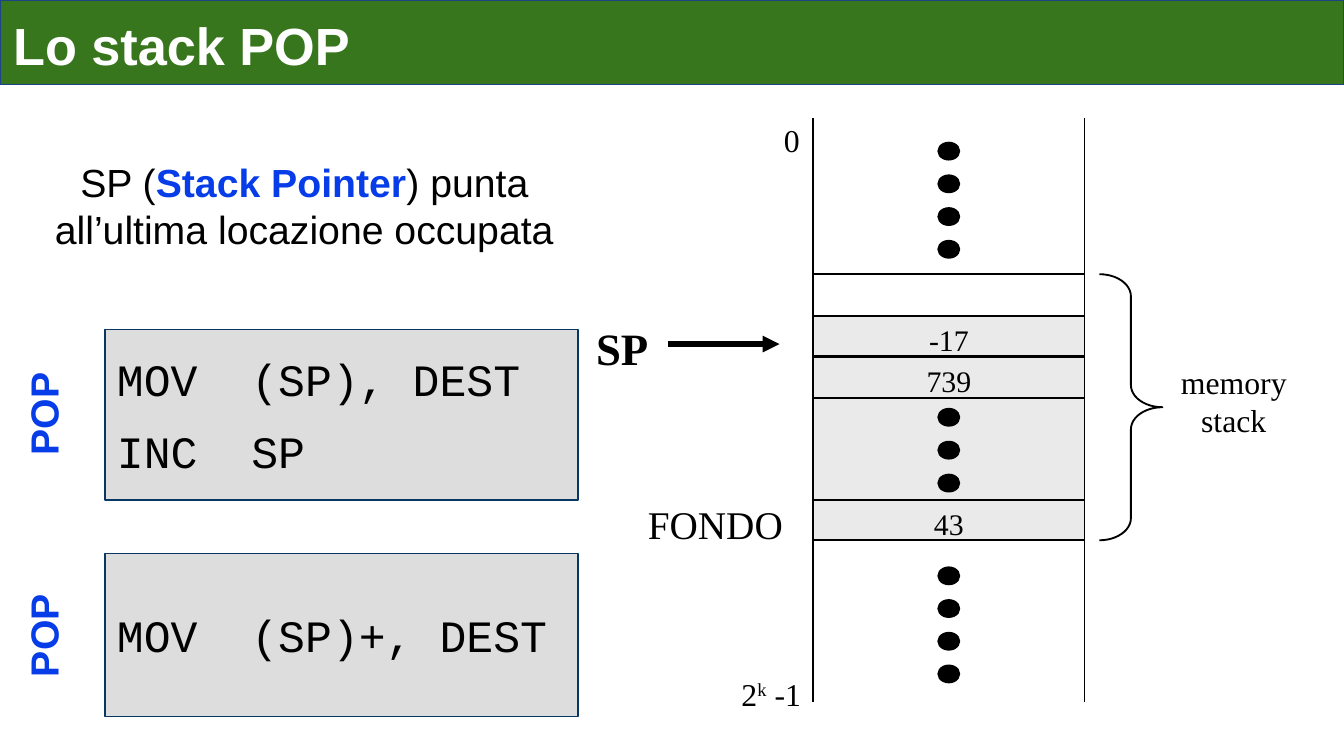
from lxml.etree import SubElement
from pptx import Presentation
from pptx.dml.color import RGBColor
from pptx.enum.shapes import MSO_CONNECTOR, MSO_SHAPE
from pptx.enum.text import MSO_ANCHOR, PP_ALIGN
from pptx.oxml.ns import qn
from pptx.util import Inches, Pt

BLACK = RGBColor(0x00, 0x00, 0x00)
WHITE = RGBColor(0xFF, 0xFF, 0xFF)
GREEN = RGBColor(0x38, 0x76, 0x1D)
TITLE_EDGE = RGBColor(0x1C, 0x45, 0x87)
BLUE = RGBColor(0x06, 0x3D, 0xE8)
CODE_FILL = RGBColor(0xDD, 0xDD, 0xDD)
CODE_EDGE = RGBColor(0x07, 0x37, 0x63)
STACK_FILL = RGBColor(0xEA, 0xEA, 0xEA)

SANS, SERIF, MONO = "Arial", "Times New Roman", "Courier New"
LEFT, CENTER, RIGHT = PP_ALIGN.LEFT, PP_ALIGN.CENTER, PP_ALIGN.RIGHT

SLIDE_WIDTH = 10
SLIDE_HEIGHT = SLIDE_WIDTH * 9 / 16
MEMORY_LEFT, MEMORY_WIDTH = 6.05, 2.02
MEMORY_RIGHT = MEMORY_LEFT + MEMORY_WIDTH
MEMORY_TOP, MEMORY_BOTTOM = 0.88, 5.22
STACK_TOP, STACK_BOTTOM = 2.04, 4.02
CELL_HEIGHT, CELL_PITCH = 0.3, 0.31
OCCUPIED_TOP = STACK_TOP + CELL_PITCH
DOT_WIDTH, DOT_HEIGHT = 0.16, 0.13
CODE_LEFT, CODE_WIDTH = 0.78, 3.52
POP_LEFT, POP_WIDTH, POP_HEIGHT = -0.19, 1.27, 0.68

TITLE = "Lo stack POP"
MEMORY_CELLS = [
    (STACK_TOP, CELL_PITCH, "", 1),
    (OCCUPIED_TOP, CELL_HEIGHT, "-17", 0.75),
    (OCCUPIED_TOP + CELL_PITCH, CELL_HEIGHT, "739", 1),
    (STACK_BOTTOM - CELL_HEIGHT, CELL_HEIGHT, "43", 0.75),
]
DOT_COLUMNS = [(1.06, 1.79, 4), (3.04, 3.53, 3), (4.22, 4.95, 4)]
CODE_BOXES = [
    (2.45, 1.27, ["MOV\t(SP), DEST", "INC\tSP"]),
    (4.12, 1.21, ["MOV\t(SP)+, DEST"]),
]
POP_LABELS = [("POP", 2.74), ("POP", 4.39)]
LABELS = [
    ((5.73, 0.86, 0.31, 0.33), RIGHT, 17, SERIF, [("0", {})]),
    ((5.27, 4.98, 0.78, 0.33), RIGHT, 17, SERIF,
     [("2", {}), ("k", {"raised": True}), (" -1", {})]),
    ((4.73, 3.68, 1.59, 0.38), LEFT, 21, SERIF, [("FONDO", {})]),
    ((4.23, 2.35, 0.8, 0.43), CENTER, 24, SERIF, [("SP", {"bold": True})]),
    ((8.54, 2.66, 1.28, 0.58), CENTER, 17, SERIF, [("memory stack", {})]),
    ((0.3, 1.14, 3.93, 0.68), CENTER, 21, SANS,
     [("SP (", {}), ("Stack Pointer", {"color": BLUE, "bold": True}),
      (") punta all’ultima locazione occupata", {})]),
]

presentation = Presentation()
presentation.slide_width = Inches(SLIDE_WIDTH)
presentation.slide_height = Inches(SLIDE_HEIGHT)
slide = presentation.slides.add_slide(presentation.slide_layouts[6])


def set_frame(shape, anchor=MSO_ANCHOR.TOP, side=0.09, top=0.04):
    frame = shape.text_frame
    frame.word_wrap = True
    frame.vertical_anchor = anchor
    frame.margin_left = frame.margin_right = Inches(side)
    frame.margin_top = frame.margin_bottom = Inches(top)
    return frame


def add_run(paragraph, text, size, font, color=BLACK, bold=False, raised=False):
    run = paragraph.add_run()
    run.text = text
    run.font.size = Pt(size)
    run.font.name = font
    run.font.bold = bold
    run.font.color.rgb = color
    if raised:
        run._r.get_or_add_rPr().set("baseline", "30000")


def add_box(kind, box, fill=None, line=BLACK, width=0.75):
    shape = slide.shapes.add_shape(kind, *map(Inches, box))
    shape.shadow.inherit = False
    if fill is None:
        shape.fill.background()
    else:
        shape.fill.solid()
        shape.fill.fore_color.rgb = fill
    shape.line.color.rgb = line
    shape.line.width = Pt(width)
    return shape


def add_label(box, alignment, size, font, runs):
    label = slide.shapes.add_textbox(*map(Inches, box))
    paragraph = set_frame(label).paragraphs[0]
    paragraph.alignment = alignment
    for text, style in runs:
        add_run(paragraph, text, size, font, **style)
    return label


def add_line(start, end, width, arrow=False):
    line = slide.shapes.add_connector(MSO_CONNECTOR.STRAIGHT, *map(Inches, start + end))
    line.line.color.rgb = BLACK
    line.line.width = Pt(width)
    if arrow:
        SubElement(line.line._get_or_add_ln(), qn("a:tailEnd"), type="triangle")
    SubElement(line._element.spPr, qn("a:effectLst"))


add_box(MSO_SHAPE.RECTANGLE,
        (MEMORY_LEFT, OCCUPIED_TOP, MEMORY_WIDTH, STACK_BOTTOM - OCCUPIED_TOP), STACK_FILL)
for x in (MEMORY_LEFT, MEMORY_RIGHT):
    add_line((x, MEMORY_TOP), (x, MEMORY_BOTTOM), 0.75)

for top, height, value, width in MEMORY_CELLS:
    cell = add_box(MSO_SHAPE.RECTANGLE, (MEMORY_LEFT, top, MEMORY_WIDTH, height), width=width)
    if value:
        paragraph = set_frame(cell).paragraphs[0]
        paragraph.alignment = CENTER
        add_run(paragraph, value, 16, SERIF)

dot_left = MEMORY_LEFT + (MEMORY_WIDTH - DOT_WIDTH) / 2
for first, last, count in DOT_COLUMNS:
    step = (last - first) / (count - 1)
    for index in range(count):
        add_box(MSO_SHAPE.OVAL,
                (dot_left, first + index * step, DOT_WIDTH, DOT_HEIGHT), BLACK)

for label in LABELS:
    add_label(*label)
add_line((4.97, 2.56), (5.8, 2.56), 3, arrow=True)

brace = add_box(MSO_SHAPE.RIGHT_BRACE,
                (8.18, STACK_TOP, 0.47, STACK_BOTTOM - STACK_TOP), width=1)
brace.adjustments[0] = 0.35
brace.adjustments[1] = 0.5

for top, height, instructions in CODE_BOXES:
    code_box = add_box(MSO_SHAPE.RECTANGLE, (CODE_LEFT, top, CODE_WIDTH, height),
                       CODE_FILL, CODE_EDGE)
    frame = set_frame(code_box, MSO_ANCHOR.MIDDLE)
    for index, instruction in enumerate(instructions):
        paragraph = frame.add_paragraph() if index else frame.paragraphs[0]
        paragraph.alignment = LEFT
        paragraph.space_before = Pt(10 if index else 0)
        add_run(paragraph, instruction, 24, MONO)

title_bar = add_box(MSO_SHAPE.RECTANGLE, (0, 0, SLIDE_WIDTH, 0.63), GREEN, TITLE_EDGE)
title_paragraph = set_frame(title_bar, side=0.1, top=0.1).paragraphs[0]
title_paragraph.alignment = LEFT
add_run(title_paragraph, TITLE, 28, SANS, WHITE, bold=True)

for text, top in POP_LABELS:
    pop_label = add_label((POP_LEFT, top, POP_WIDTH, POP_HEIGHT), CENTER, 21, SANS,
                          [(text, {"color": BLUE, "bold": True})])
    pop_label.rotation = 270

presentation.save("out.pptx")
